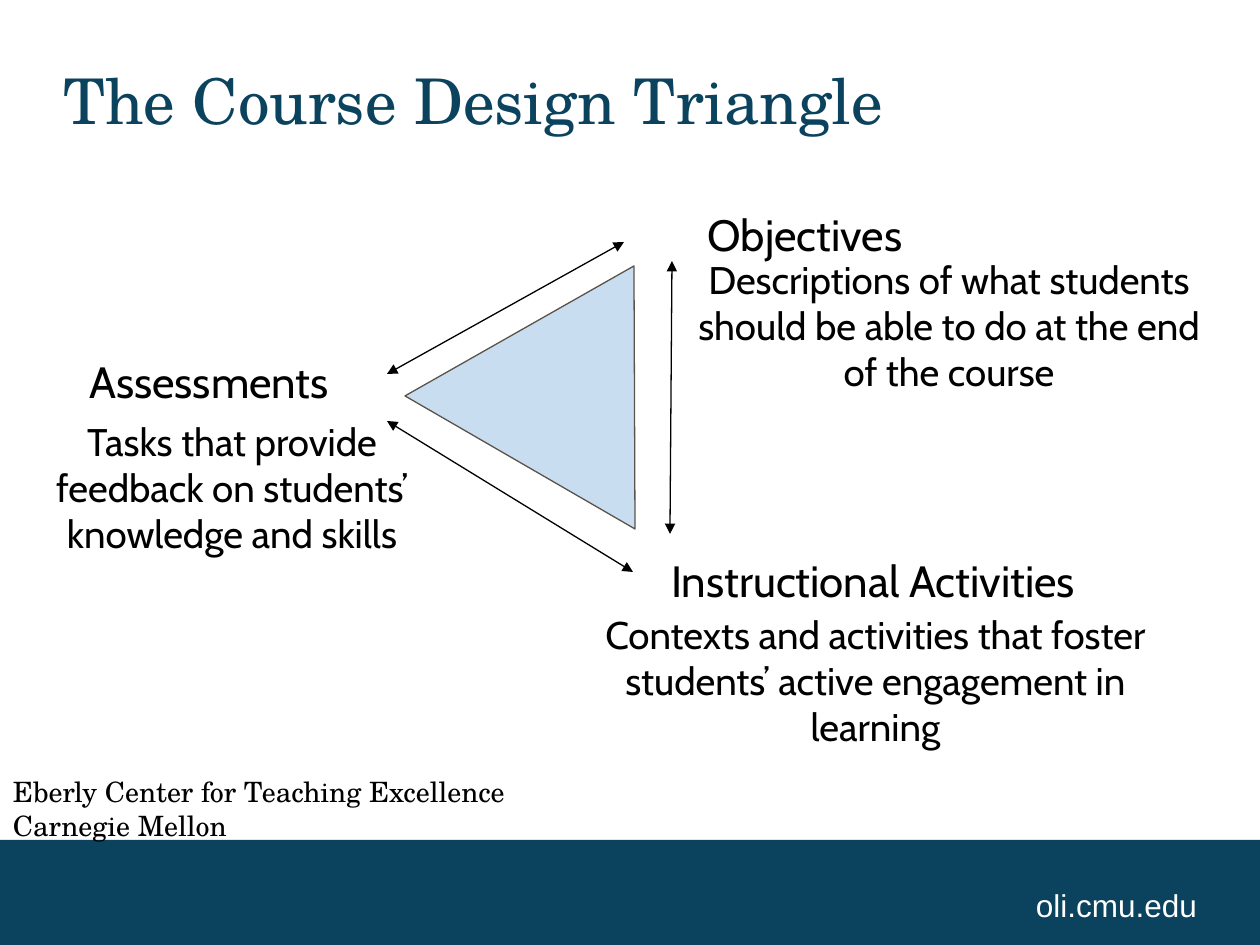
from lxml.etree import SubElement
from pptx import Presentation
from pptx.dml.color import RGBColor
from pptx.enum.shapes import MSO_CONNECTOR, MSO_SHAPE
from pptx.enum.text import MSO_ANCHOR, MSO_AUTO_SIZE, PP_ALIGN
from pptx.oxml.ns import qn
from pptx.util import Pt

EMU_PER_PX = 914400 / 126

NAVY = RGBColor(0x0B, 0x43, 0x5F)
PALE_BLUE = RGBColor(0xC8, 0xDD, 0xF0)
BROWN = RGBColor(0x5B, 0x52, 0x49)
BLACK = RGBColor(0, 0, 0)
WHITE = RGBColor(255, 255, 255)

SERIF, SANS, FOOTER_FONT = "TeX Gyre Schola", "Cabin", "Arial"

# Heading, its box, description, its box; boxes are left, top, width, height
CORNERS = [
    ("Objectives", (646, 200, 318, 60),
     "Descriptions of what students should be able to do at the end of the course",
     (680, 251, 538, 150)),
    ("Assessments", (39, 347, 340, 60),
     "Tasks that provide feedback on students’ knowledge and skills",
     (10, 413, 444, 150)),
    ("Instructional Activities", (577, 546, 592, 60),
     "Contexts and activities that foster students’ active engagement in learning",
     (580, 606, 591, 150)),
]
TRIANGLE = [(634, 266), (405, 396), (635, 529)]
ARROWS = [
    ((387, 421), (633, 572)),
    ((387, 374), (624, 242)),
    ((670, 534), (672, 261)),
]


def px(length):
    return round(length * EMU_PER_PX)


def format_text(frame, text, font, size, color, align=PP_ALIGN.LEFT,
                anchor=MSO_ANCHOR.TOP, insets=(0, 0)):
    """Fill a text frame; insets are horizontal and vertical, in px."""
    frame.text = text
    frame.word_wrap = True
    frame.auto_size = MSO_AUTO_SIZE.NONE
    frame.vertical_anchor = anchor
    frame.margin_left = frame.margin_right = px(insets[0])
    frame.margin_top = frame.margin_bottom = px(insets[1])
    for paragraph in frame.paragraphs:
        paragraph.alignment = align
        for run in paragraph.runs:
            run.font.name = font
            run.font.size = Pt(size)
            run.font.color.rgb = color


def add_text(slide, box, text, font, size, color, **layout):
    frame = slide.shapes.add_textbox(*map(px, box)).text_frame
    format_text(frame, text, font, size, color, **layout)
    return frame


def set_title(slide, text):
    title = slide.shapes.title
    title.left, title.top, title.width, title.height = map(px, (63, 63, 1134, 73))
    format_text(title.text_frame, text, SERIF, 36, NAVY, anchor=MSO_ANCHOR.MIDDLE)


def add_footer(slide):
    band = slide.shapes.add_shape(MSO_SHAPE.RECTANGLE, *map(px, (0, 840, 1260, 105)))
    band.shadow.inherit = False
    band.fill.solid()
    band.fill.fore_color.rgb = NAVY
    band.line.fill.background()
    add_text(slide, (966, 861, 231, 63), "oli.cmu.edu", FOOTER_FONT, 18, WHITE,
             align=PP_ALIGN.RIGHT, anchor=MSO_ANCHOR.BOTTOM)


def add_triangle(slide):
    builder = slide.shapes.build_freeform(*TRIANGLE[0], scale=EMU_PER_PX)
    builder.add_line_segments(TRIANGLE[1:], close=True)
    triangle = builder.convert_to_shape()
    triangle.shadow.inherit = False
    triangle.fill.solid()
    triangle.fill.fore_color.rgb = PALE_BLUE
    triangle.line.color.rgb = BROWN
    triangle.line.width = Pt(0.75)


def add_double_arrow(slide, start, end):
    arrow = slide.shapes.add_connector(MSO_CONNECTOR.STRAIGHT, *map(px, start + end))
    arrow.line.color.rgb = BLACK
    arrow.line.width = Pt(0.75)
    line = arrow.line._get_or_add_ln()
    for tip in ("a:headEnd", "a:tailEnd"):
        SubElement(line, qn(tip), type="triangle")
    SubElement(arrow._element.spPr, qn("a:effectLst"))


def add_corner(slide, heading, heading_box, description, description_box):
    frame = add_text(slide, heading_box, heading, SANS, 25, BLACK,
                     align=PP_ALIGN.CENTER)
    frame.paragraphs[0].line_spacing = Pt(34.2)
    add_text(slide, description_box, description, SANS, 22, BLACK,
             align=PP_ALIGN.CENTER, insets=(11, 5))


def main():
    presentation = Presentation()
    presentation.slide_width, presentation.slide_height = px(1260), px(945)
    slide = presentation.slides.add_slide(presentation.slide_layouts[5])

    add_footer(slide)
    set_title(slide, "The Course Design Triangle")
    add_text(slide, (0, 769, 935, 50),
             "Eberly Center for Teaching Excellence\nCarnegie Mellon",
             SERIF, 16, BLACK, insets=(13, 6))
    add_triangle(slide)
    for start, end in ARROWS:
        add_double_arrow(slide, start, end)
    for corner in CORNERS:
        add_corner(slide, *corner)

    presentation.save("out.pptx")


if __name__ == "__main__":
    main()
